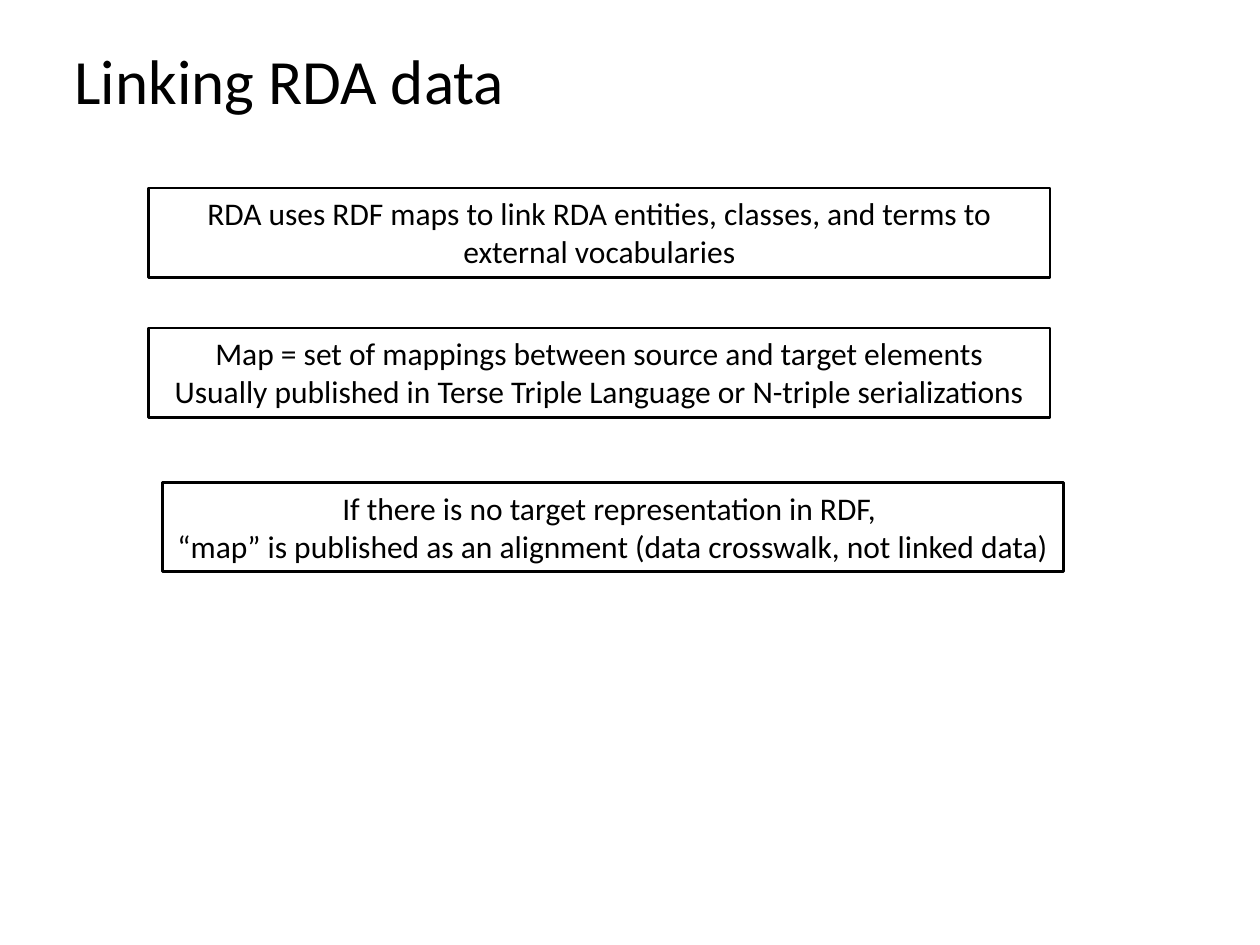
from dataclasses import dataclass

from pptx import Presentation
from pptx.dml.color import RGBColor
from pptx.enum.shapes import MSO_SHAPE
from pptx.enum.text import MSO_ANCHOR, MSO_AUTO_SIZE, PP_ALIGN
from pptx.util import Pt


@dataclass(frozen=True)
class Theme:
    font: str = "Calibri"
    ink: RGBColor = RGBColor(0, 0, 0)
    title_size: Pt = Pt(36)
    body_size: Pt = Pt(18)
    border: Pt = Pt(1.5)


theme = Theme()


def write(frame, lines, size, align):
    frame.vertical_anchor = MSO_ANCHOR.TOP
    frame.auto_size = MSO_AUTO_SIZE.SHAPE_TO_FIT_TEXT
    frame.text = "\n".join(lines)
    for paragraph in frame.paragraphs:
        paragraph.alignment = align
        paragraph.font.name = theme.font
        paragraph.font.size = size
        paragraph.font.color.rgb = theme.ink


presentation = Presentation()
presentation.slide_width, presentation.slide_height = Pt(720), Pt(540)
slide = presentation.slides.add_slide(presentation.slide_layouts[6])

title = slide.shapes.add_textbox(Pt(35.5), Pt(20), Pt(263), Pt(51))
title.text_frame.word_wrap = False
write(title.text_frame, ["Linking RDA data"], theme.title_size, PP_ALIGN.LEFT)

statement_width, statement_height = Pt(515), Pt(51)
statements = [
    (85, 107.5, ["RDA uses RDF maps to link RDA entities, classes, and terms to external vocabularies"]),
    (85, 187.5, ["Map = set of mappings between source and target elements",
                 "Usually published in Terse Triple Language or N-triple serializations"]),
    (92.75, 275.75, ["If there is no target representation in RDF, ",
                     "“map” is published as an alignment (data crosswalk, not linked data)"]),
]
for left, top, lines in statements:
    statement = slide.shapes.add_shape(
        MSO_SHAPE.RECTANGLE, Pt(left), Pt(top), statement_width, statement_height)
    statement.shadow.inherit = False
    statement.fill.background()
    statement.line.color.rgb = theme.ink
    statement.line.width = theme.border
    statement.text_frame.word_wrap = True
    write(statement.text_frame, lines, theme.body_size, PP_ALIGN.CENTER)

presentation.save("out.pptx")
